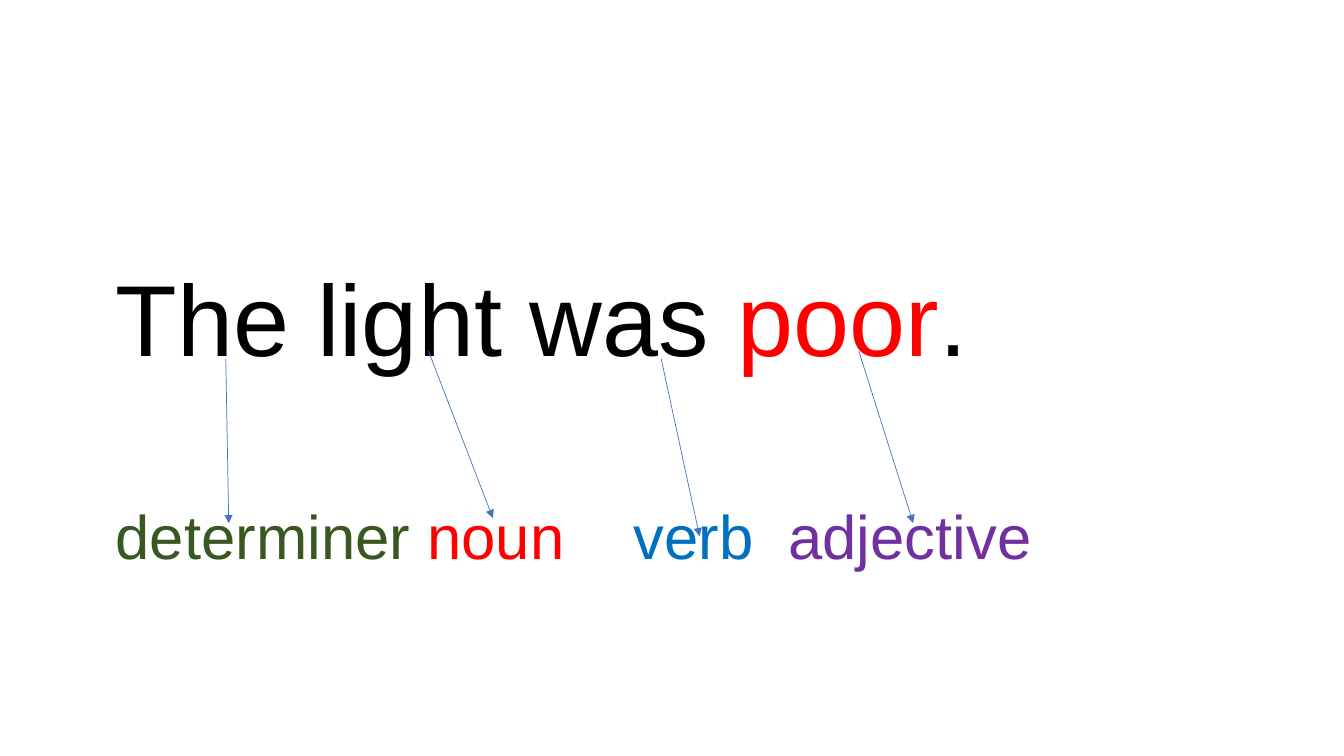
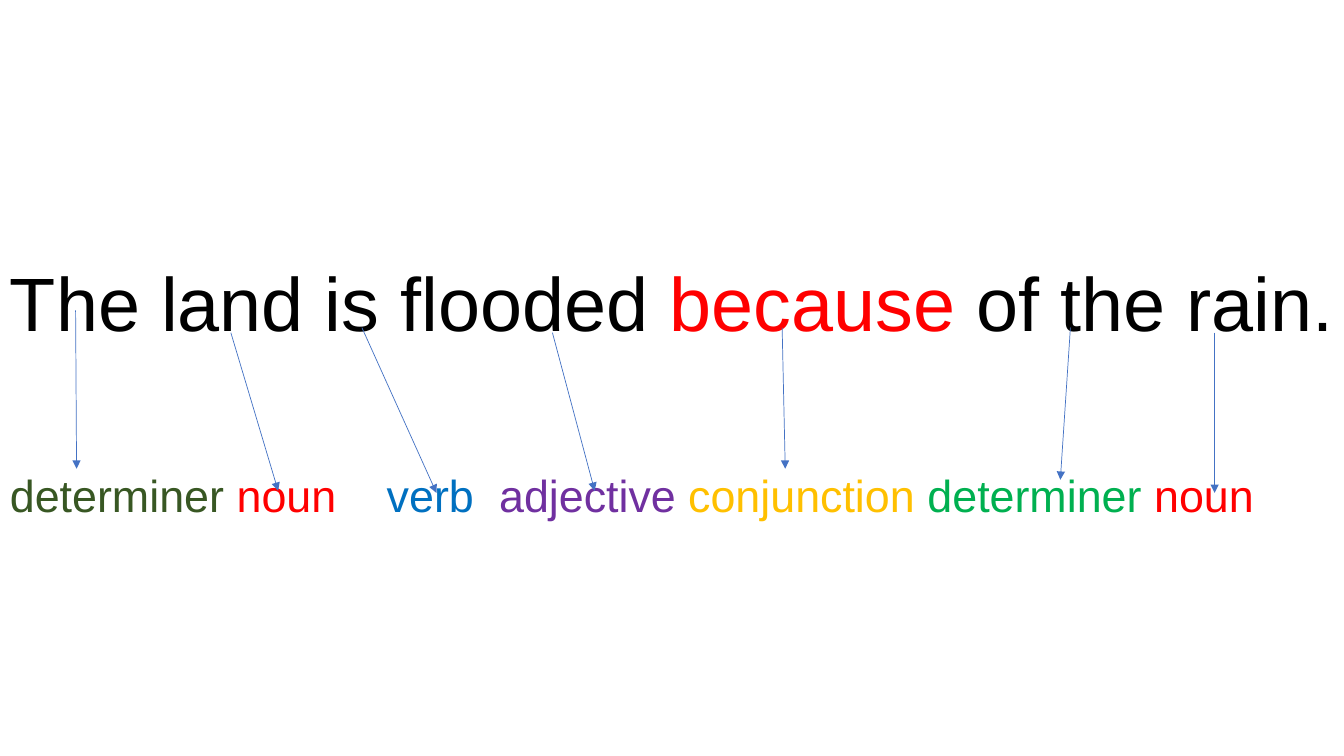
from lxml import etree
from pptx import Presentation
from pptx.dml.color import RGBColor
from pptx.enum.shapes import MSO_CONNECTOR
from pptx.oxml.ns import qn
from pptx.util import Pt

STRAIGHT = MSO_CONNECTOR.STRAIGHT
FONT = "Arial"
COLORS = {
    "text": "000000",
    "focus": "FF0000",
    "determiner": "385723",
    "second_determiner": "00B050",
    "noun": "FF0000",
    "verb": "0070C0",
    "adjective": "7030A0",
    "conjunction": "FFC000",
    "arrow": "4472C4",
}
LABEL_STOPS_EM = [5.06, 8.41, 10.92, 15.14, 20.48, 25.54]
LABEL_GAP = 86.4

SENTENCES = [
    {
        "box": (75.6, 179.3, 792, 234.7),
        "sizes": (72, 44),
        "words": [("The light was ", "text"), ("poor", "focus"), (".", "text")],
        "labels": [("determiner", "determiner"), ("noun", "noun"),
                   ("verb", "verb"), ("adjective", "adjective")],
        "arrows": [
            (85.7, 77, 87.8, 194.4),
            (230.4, 71.3, 276.5, 190.8),
            (396.7, 77, 424.1, 203.8),
            (537.8, 71.3, 576.7, 194.4),
        ],
    },
    {
        "box": (0, 179.3, 990, 203.8),
        "sizes": (54, 32),
        "words": [("The land is flooded ", "text"), ("because", "focus"),
                  (" of the rain.", "text")],
        "labels": [("determiner", "determiner"), ("noun", "noun"),
                   ("verb", "verb"), ("adjective", "adjective"),
                   ("conjunction", "conjunction"),
                   ("determiner", "second_determiner"), ("noun", "noun")],
        "arrows": [
            (54, 42.5, 54.7, 155.5),
            (164.9, 58.3, 198.7, 171.3),
            (258.5, 54.7, 311.8, 172.8),
            (394.6, 58.3, 424.8, 171.3),
            (558.7, 54.7, 560.9, 155.5),
            (764.6, 54.7, 757.4, 163.4),
            (867.6, 58.3, 867.6, 172.8),
        ],
    },
]


def add_run(p, text, size, color):
    r = p.add_run()
    r.text = text
    r.font.name = FONT
    r.font.size = Pt(size)
    r.font.color.rgb = RGBColor.from_string(COLORS[color])


def add_tab_stops(p, positions):
    tabs = etree.SubElement(p._p.get_or_add_pPr(), qn("a:tabLst"))
    for position in positions:
        etree.SubElement(tabs, qn("a:tab"), pos=str(Pt(position)), algn="l")


def add_sentence(slide, box, sizes, words, labels):
    word_size, label_size = sizes
    tf = slide.shapes.add_textbox(*map(Pt, box)).text_frame
    tf.word_wrap = True
    p = tf.paragraphs[0]
    for text, color in words:
        add_run(p, text, word_size, color)
    p = tf.add_paragraph()
    p.space_before = Pt(LABEL_GAP)
    add_tab_stops(p, [em * label_size for em in LABEL_STOPS_EM[:len(labels) - 1]])
    for i, (text, color) in enumerate(labels):
        add_run(p, "\t" + text if i else text, label_size, color)


def add_arrow(slide, box, ends):
    left, top = box[:2]
    x1, y1, x2, y2 = ends
    arrow = slide.shapes.add_connector(
        STRAIGHT, Pt(left + x1), Pt(top + y1), Pt(left + x2), Pt(top + y2))
    arrow.line.color.rgb = RGBColor.from_string(COLORS["arrow"])
    arrow.line.width = Pt(0.5)
    etree.SubElement(arrow.line._get_or_add_ln(), qn("a:tailEnd"), type="triangle")
    etree.SubElement(arrow._element.spPr, qn("a:effectLst"))


def add_grammar_slide(prs, box, sizes, words, labels, arrows):
    slide = prs.slides.add_slide(prs.slide_layouts[6])
    add_sentence(slide, box, sizes, words, labels)
    for ends in arrows:
        add_arrow(slide, box, ends)


def main():
    prs = Presentation()
    prs.slide_width, prs.slide_height = Pt(960), Pt(540)
    for sentence in SENTENCES:
        add_grammar_slide(prs, **sentence)
    prs.save("out.pptx")


if __name__ == "__main__":
    main()
